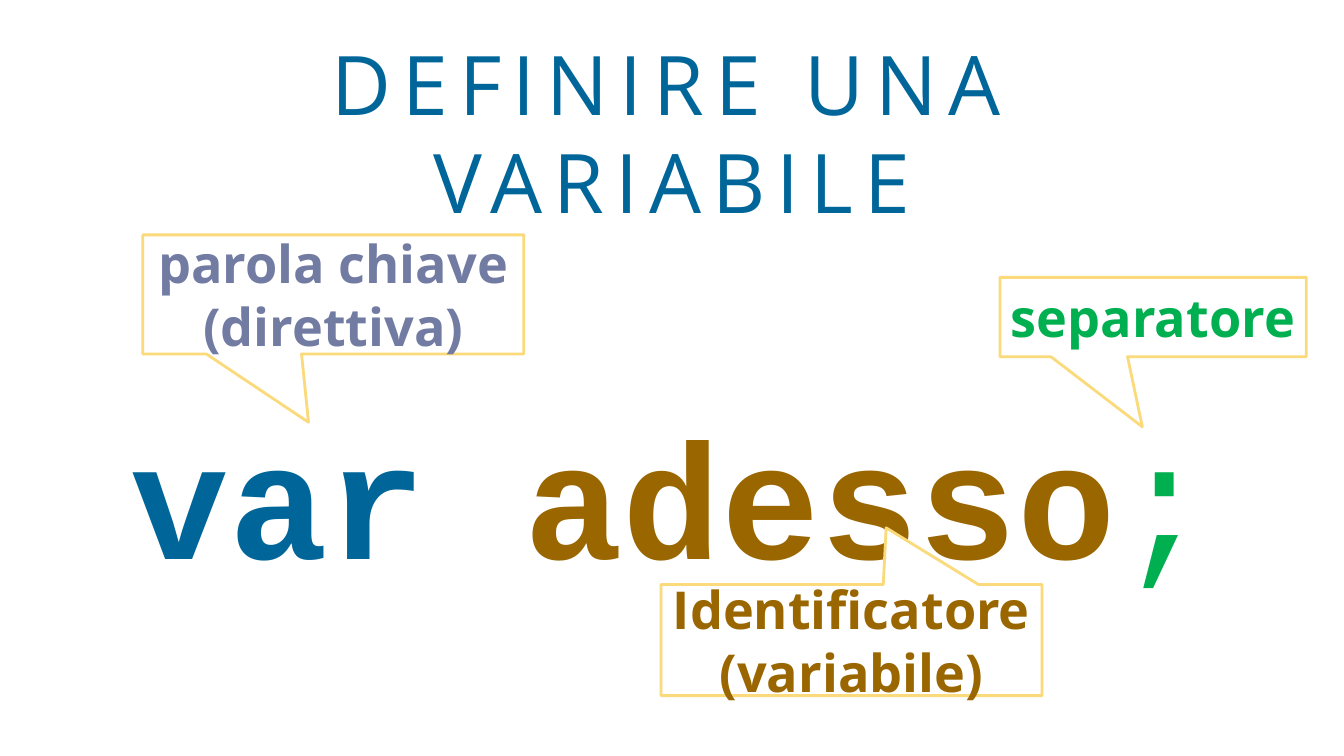
from pptx import Presentation
from pptx.dml.color import RGBColor
from pptx.enum.shapes import MSO_SHAPE
from pptx.enum.text import MSO_ANCHOR, MSO_AUTO_SIZE, PP_ALIGN
from pptx.oxml.ns import qn
from pptx.util import Cm, Pt
from lxml.etree import SubElement

BLUE = RGBColor(0x00, 0x66, 0x99)
BROWN = RGBColor(0x99, 0x66, 0x00)
GREEN = RGBColor(0x00, 0xB0, 0x50)
VIOLET = RGBColor(0x72, 0x7C, 0xA3)
YELLOW = RGBColor(0xFA, 0xDA, 0x7A)
WHITE = RGBColor(0xFF, 0xFF, 0xFF)

TITLE_FORMAT = {"name": "Open Sans", "size": Pt(58.7), "bold": False}
CODE_FORMAT = {"name": "Courier New", "size": Pt(117.3), "bold": True}
LABEL_FORMAT = {"name": "Open Sans", "size": Pt(37.3), "bold": True}

CODE_PARTS = [("var ", BLUE, True), ("adesso", BROWN, True), (";", GREEN, False)]
CALLOUTS = [
    (["parola chiave", "(direttiva)"], VIOLET, (3.6, 5.92, 9.6, 3.0), (-0.065, 1.074)),
    (["Identificatore", "(variabile)"], BROWN, (16.66, 14.73, 9.6, 2.8), (0.091, -1.01)),
    (["separatore"], GREEN, (25.2, 6.99, 7.72, 2.0), (-0.035, 1.383)),
]


def place(shape, left, top, width, height):
    """Move and size a shape, in centimetres."""
    bounds = {"left": left, "top": top, "width": width, "height": height}
    for name, value in bounds.items():
        setattr(shape, name, Cm(value))


def add_span(para, text, color, formats):
    """Add a formatted span of text to a paragraph."""
    span = para.add_run()
    span.text = text
    for name, value in formats.items():
        setattr(span.font, name, value)
    span.font.color.rgb = color
    return span


def prepare_frame(shape, anchor):
    """Set wrapping, fitting and anchoring, and return the text frame."""
    frame = shape.text_frame
    settings = {"word_wrap": True, "auto_size": MSO_AUTO_SIZE.NONE, "vertical_anchor": anchor}
    for name, value in settings.items():
        setattr(frame, name, value)
    return frame


def fill_title(title):
    """Write the letter-spaced title."""
    place(title, 1.7, 1.73, 30.48, 3.18)
    para = prepare_frame(title, MSO_ANCHOR.MIDDLE).paragraphs[0]
    para.alignment = PP_ALIGN.CENTER
    span = add_span(para, "DEFINIRE UNA VARIABILE", BLUE, TITLE_FORMAT)
    span.font._element.set("spc", "800")


def fill_code(body):
    """Write the coloured line of code."""
    place(body, 1.7, 9.12, 30.48, 5.21)
    frame = prepare_frame(body, MSO_ANCHOR.TOP)
    frame.margin_top = Cm(0.85)
    para = frame.paragraphs[0]
    properties = para._p.get_or_add_pPr()
    for name in ("marL", "indent"):
        properties.set(name, "0")
    SubElement(properties, qn("a:buNone"))
    para.alignment = PP_ALIGN.CENTER
    para.space_before = Pt(0)
    for text, color, bold in CODE_PARTS:
        add_span(para, text, color, {**CODE_FORMAT, "bold": bold})


def add_callout(page, lines, color, bounds, tip):
    """Add a callout whose tip points at a part of the code."""
    box = page.shapes.add_shape(MSO_SHAPE.RECTANGULAR_CALLOUT, *map(Cm, bounds))
    box.shadow.inherit = False
    box.adjustments[0], box.adjustments[1] = tip
    box.fill.solid()
    box.fill.fore_color.rgb = WHITE
    box.line.color.rgb = YELLOW
    box.line.width = Pt(2)
    frame = prepare_frame(box, MSO_ANCHOR.MIDDLE)
    frame.margin_left = frame.margin_right = Cm(0)
    for index, line in enumerate(lines):
        para = frame.add_paragraph() if index else frame.paragraphs[0]
        para.alignment = PP_ALIGN.CENTER
        add_span(para, line, color, LABEL_FORMAT)


def main():
    """Build the slide and save the deck."""
    deck = Presentation()
    deck.slide_width, deck.slide_height = Cm(33.87), Cm(19.05)
    page = deck.slides.add_slide(deck.slide_layouts[1])
    fill_title(page.shapes.title)
    fill_code(page.placeholders[1])
    for callout in CALLOUTS:
        add_callout(page, *callout)
    deck.save("out.pptx")


if __name__ == "__main__":
    main()
